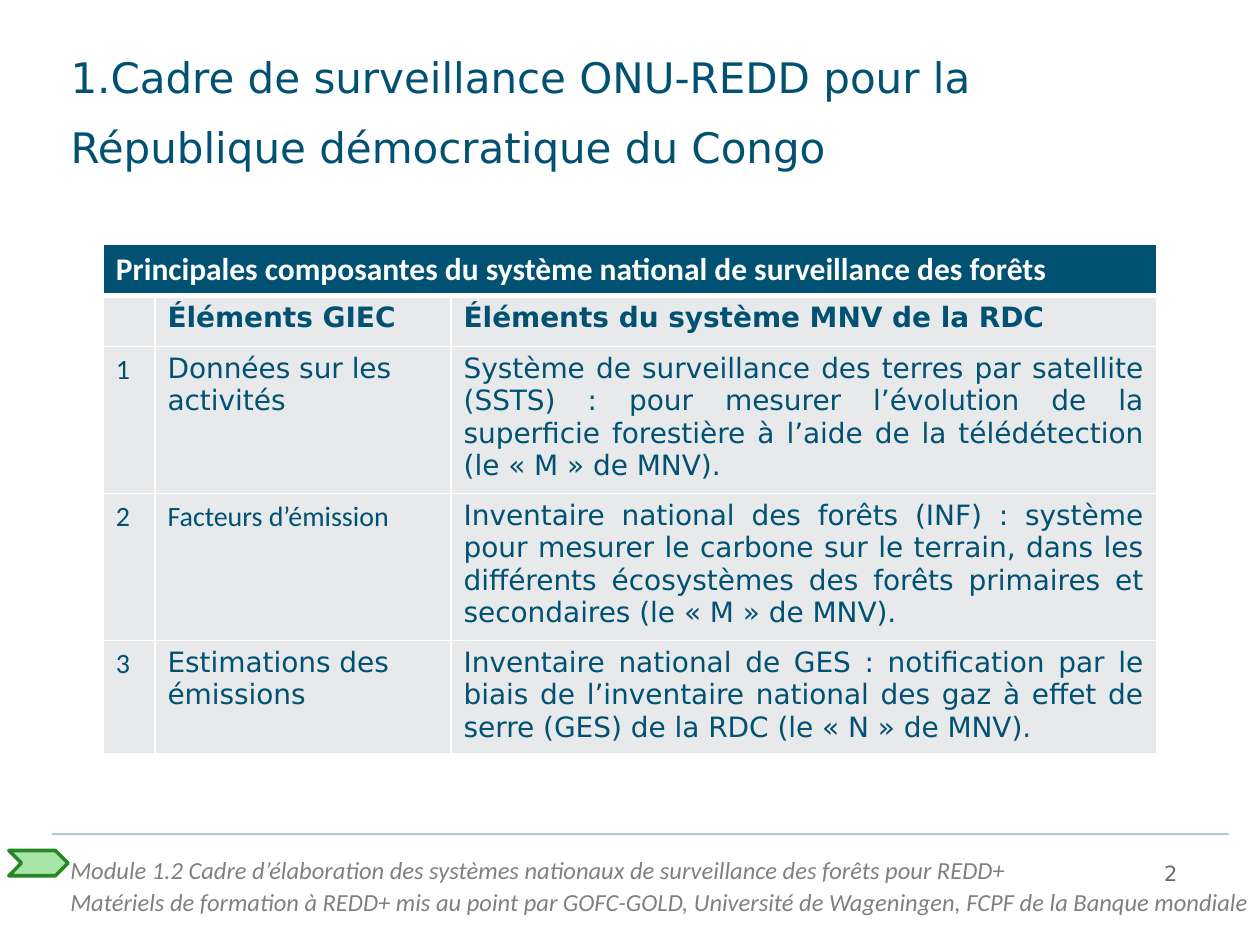
from lxml import etree
from pptx import Presentation
from pptx import util as u
from pptx.dml.color import RGBColor
from pptx.enum import shapes, text
from pptx.oxml import ns

COLORS = {"teal": "005172", "white": "FFFFFF", "cell": "E7E9EB", "footer": "808080",
          "number": "706762", "arrow": "A8E6A8", "arrow_edge": "278626"}

presentation = Presentation()
presentation.slide_width, presentation.slide_height = u.Inches(10), u.Inches(7.5)
slide = presentation.slides.add_slide(presentation.slide_layouts[6])
percent_x = presentation.slide_width / 100
percent_y = presentation.slide_height / 100


def box(left, top, width, height):
    return [u.Emu(round(share * unit)) for share, unit in
            zip((left, top, width, height), (percent_x, percent_y) * 2)]


def write(frame, content, size, font, color, spacing=None, bold=False, italic=False):
    frame.word_wrap = True
    frame.text = content
    for paragraph in frame.paragraphs:
        if spacing:
            paragraph.line_spacing = u.Pt(spacing)
        for run in paragraph.runs:
            run.font.size, run.font.name = u.Pt(size), font
            run.font.bold, run.font.italic = bold, italic
            run.font.color.rgb = RGBColor.from_string(COLORS[color])


footer = slide.shapes.add_textbox(*box(4.6, 89.6, 98, 8.13))
write(footer.text_frame,
      "Module 1.2 Cadre d’élaboration des systèmes nationaux de surveillance des forêts pour REDD+\n"
      "Matériels de formation à REDD+ mis au point par GOFC-GOLD, Université de Wageningen, "
      "FCPF de la Banque mondiale", 14, "Calibri", "footer", spacing=18, italic=True)

arrow = slide.shapes.add_shape(shapes.MSO_SHAPE.CHEVRON, *box(0.7, 90, 4.7, 2.67))
arrow.shadow.inherit = False
arrow.fill.solid()
arrow.fill.fore_color.rgb = RGBColor.from_string(COLORS["arrow"])
arrow.line.color.rgb = RGBColor.from_string(COLORS["arrow_edge"])
arrow.line.width = u.Pt(2)

number = slide.shapes.add_textbox(*box(91.4, 89.73, 6.1, 4.4))
write(number.text_frame, "2", 12, "DejaVu Sans", "number", spacing=18)

rule = slide.shapes.add_connector(shapes.MSO_CONNECTOR.STRAIGHT, *box(4.1, 88.27, 97.5, 88.27))
rule.line.color.rgb = RGBColor.from_string(COLORS["teal"])
rule.line.width = u.Pt(1.25)
rule_color = rule.line.fill._xPr.find(".//" + ns.qn("a:srgbClr"))
etree.SubElement(rule_color, ns.qn("a:alpha"), val="30000")
etree.SubElement(rule._element.spPr, ns.qn("a:effectLst"))

title = slide.shapes.add_textbox(*box(5.4, 3.33, 92.3, 18.8))
title.text_frame.margin_left, title.text_frame.margin_top = u.Inches(0.02), 0
title.text_frame.margin_bottom = u.Inches(0.35)
write(title.text_frame, "1.Cadre de surveillance ONU-REDD pour la République démocratique du Congo",
      24, "DejaVu Sans", "teal", spacing=40)

rows = [
    ("Principales composantes du système national de surveillance des forêts", "", ""),
    ("", "Éléments GIEC", "Éléments du système MNV de la RDC"),
    ("1", "Données sur les activités",
     "Système de surveillance des terres par satellite (SSTS) : pour mesurer l’évolution de la "
     "superficie forestière à l’aide de la télédétection (le « M » de MNV)."),
    ("2", "Facteurs d’émission",
     "Inventaire national des forêts (INF) : système pour mesurer le carbone sur le terrain, dans "
     "les différents écosystèmes des forêts primaires et secondaires (le « M » de MNV)."),
    ("3", "Estimations des émissions",
     "Inventaire national de GES : notification par le biais de l’inventaire national des gaz à "
     "effet de serre (GES) de la RDC (le « N » de MNV)."),
]
column_shares = (4.1, 23.5, 56)
row_shares = (5.4, 5.4, 15.07, 15.07, 11.6)
table = slide.shapes.add_table(len(rows), len(column_shares),
                               *box(8.2, 25.87, sum(column_shares), sum(row_shares))).table
for column, share in zip(table.columns, column_shares):
    column.width = u.Emu(round(share * percent_x))
for row, share in zip(table.rows, row_shares):
    row.height = u.Emu(round(share * percent_y))
table.cell(0, 0).merge(table.cell(0, 2))

for row_index, row in enumerate(rows):
    for column_index, content in enumerate(row):
        cell = table.cell(row_index, column_index)
        heading = row_index == 0
        calibri = heading or column_index == 0 or content == "Facteurs d’émission"
        write(cell.text_frame, content, 18 if heading else 16,
              "Calibri" if calibri else "DejaVu Sans",
              "white" if heading else "teal", bold=row_index < 2)
        if row_index > 1 and column_index == 2:
            cell.text_frame.paragraphs[0].alignment = text.PP_ALIGN.JUSTIFY
        cell.fill.solid()
        cell.fill.fore_color.rgb = RGBColor.from_string(COLORS["teal" if heading else "cell"])
        properties = cell._tc.get_or_add_tcPr()
        for position, side in enumerate("LRTB"):
            thick = (row_index, side) in ((0, "B"), (1, "T"))
            border = etree.Element(ns.qn("a:ln" + side), w=str(u.Pt(3 if thick else 1)))
            border_fill = etree.SubElement(border, ns.qn("a:solidFill"))
            etree.SubElement(border_fill, ns.qn("a:srgbClr"), val=COLORS["white"])
            properties.insert(position, border)

presentation.save("out.pptx")
